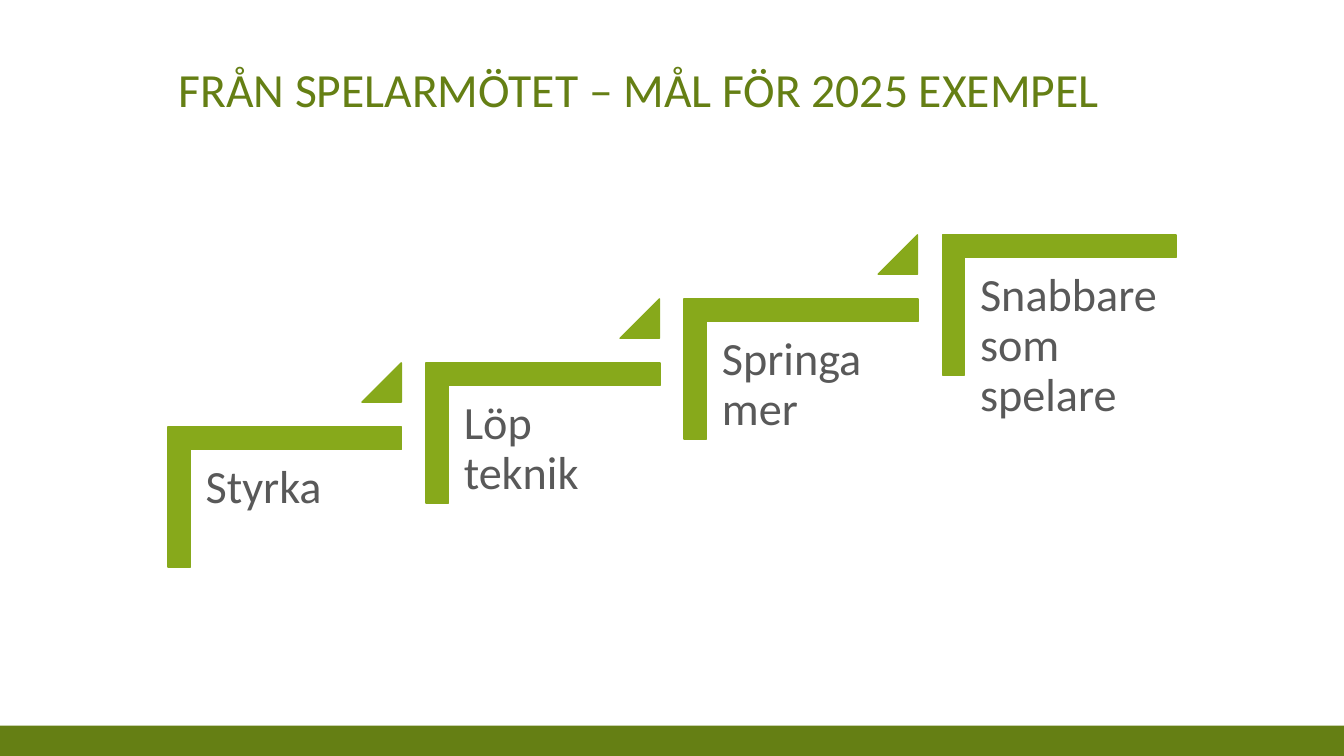
import pptx
import pptx.util
import pptx.dml.color
import pptx.enum.shapes
import pptx.enum.text

Inches = pptx.util.Inches
Pt = pptx.util.Pt
RGBColor = pptx.dml.color.RGBColor
MSO_SHAPE = pptx.enum.shapes.MSO_SHAPE

DARK_GREEN = RGBColor(0x65, 0x7F, 0x14)
LIGHT_GREEN = RGBColor(0x87, 0xA9, 0x1B)
GREY = RGBColor(0x59, 0x59, 0x59)

GOALS = ["Styrka", "Löp teknik", "Springa mer", "Snabbare som spelare"]
STEP_RIGHT = 2.56
STEP_UP = 0.635


class GoalSlide:
    font_name = "Calibri"

    def __init__(self, presentation):
        self.slide = presentation.slides.add_slide(presentation.slide_layouts[5])

    def set_text(self, frame, text, size, color):
        frame.word_wrap = True
        frame.auto_size = pptx.enum.text.MSO_AUTO_SIZE.NONE
        frame.vertical_anchor = pptx.enum.text.MSO_ANCHOR.TOP
        paragraph = frame.paragraphs[0]
        paragraph.text = text
        paragraph.alignment = pptx.enum.text.PP_ALIGN.LEFT
        paragraph.line_spacing = 0.9
        paragraph.font.name = self.font_name
        paragraph.font.size = Pt(size)
        paragraph.font.color.rgb = color

    def title(self, text):
        heading = self.slide.shapes.title
        heading.left, heading.top = Inches(1.67), Inches(0.5)
        heading.width, heading.height = Inches(10), Inches(1.25)
        self.set_text(heading.text_frame, text, 34, DARK_GREEN)
        heading.text_frame.margin_top = Inches(0.16)

    def shape(self, kind, left, top, width, height, color, outlined=True):
        shape = self.slide.shapes.add_shape(
            kind, Inches(left), Inches(top), Inches(width), Inches(height))
        shape.shadow.inherit = False
        shape.fill.solid()
        shape.fill.fore_color.rgb = color
        if outlined:
            shape.line.color.rgb = color
            shape.line.width = Pt(1)
        else:
            shape.line.fill.background()
        return shape

    def corner(self, left, top):
        corner = self.shape(MSO_SHAPE.CORNER, left, top, 1.39, 2.32, LIGHT_GREEN)
        corner.rotation = 90
        corner.adjustments[0] = corner.adjustments[1] = 0.161

    def triangle(self, left, top):
        triangle = self.shape(
            MSO_SHAPE.ISOSCELES_TRIANGLE, left, top, 0.39, 0.39, LIGHT_GREEN)
        triangle.adjustments[0] = 1

    def label(self, text, left, top):
        frame = self.slide.shapes.add_textbox(
            Inches(left), Inches(top), Inches(2.09), Inches(1.83)).text_frame
        frame.margin_left = frame.margin_right = Inches(0.14)
        frame.margin_top = frame.margin_bottom = Inches(0.14)
        self.set_text(frame, text, 33, GREY)


def main():
    presentation = pptx.Presentation()
    presentation.slide_width = Inches(13.33)
    presentation.slide_height = Inches(7.5)

    goals = GoalSlide(presentation)
    goals.shape(MSO_SHAPE.RECTANGLE, 0, 7.2, 13.33, 0.3, DARK_GREEN, outlined=False)
    goals.title("FRÅN SPELARMÖTET – MÅL FÖR 2025 EXEMPEL")
    for step, goal in enumerate(GOALS):
        right, up = step * STEP_RIGHT, step * STEP_UP
        goals.corner(2.13 + right, 3.77 - up)
        goals.label(goal, 1.9 + right, 4.46 - up)
        if step < len(GOALS) - 1:
            goals.triangle(3.59 + right, 3.6 - up)

    presentation.save("out.pptx")


if __name__ == "__main__":
    main()
